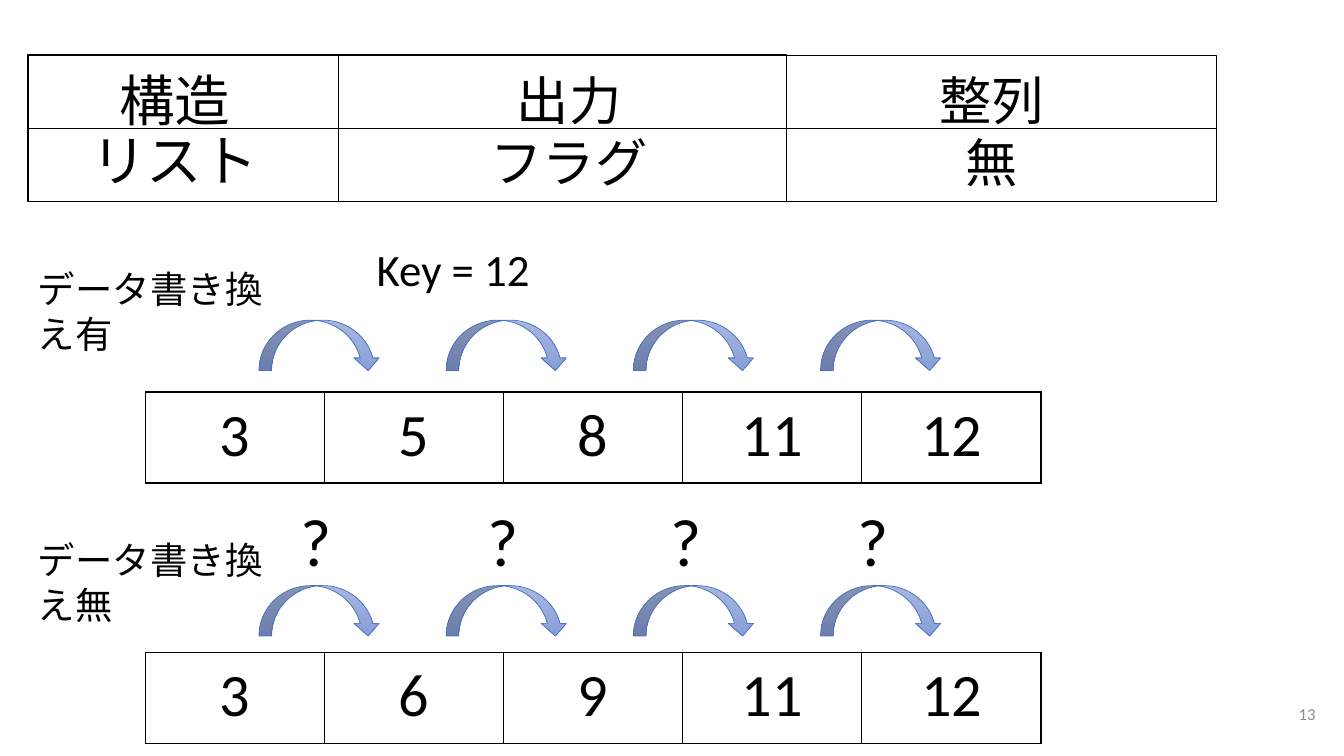
from lxml.etree import SubElement
from pptx import Presentation
from pptx.dml.color import RGBColor
from pptx.enum.shapes import MSO_CONNECTOR, MSO_SHAPE
from pptx.enum.text import MSO_ANCHOR, PP_ALIGN
from pptx.oxml import parse_xml
from pptx.oxml.ns import nsdecls, qn
from pptx.util import Pt

COLORS = {
    "ink": "000000",
    "arrow_line": "4472C4",
    "arrow_top": "A8B7DF",
    "arrow_bottom": "889ED7",
    "page_number": "8C8C8C",
}


class SlideBuilder:
    def __init__(self, page, font="Calibri"):
        self.page = page
        self.font = font

    def color(self, name):
        return RGBColor.from_string(COLORS[name])

    def add_lines(self, frame, lines, size, align, color="ink", font=None, spacing=None):
        for index, line in enumerate(lines):
            para = frame.paragraphs[0] if index == 0 else frame.add_paragraph()
            para.alignment = align
            if spacing:
                para.line_spacing = spacing
            span = para.add_run()
            span.text = line
            span.font.size = Pt(size)
            span.font.name = font or self.font
            span.font.color.rgb = self.color(color)

    def text(self, left, top, width, height, lines, size, align=PP_ALIGN.LEFT,
             margins=(7.2, 3.6), anchor=MSO_ANCHOR.TOP, **style):
        box = self.page.shapes.add_textbox(Pt(left), Pt(top), Pt(width), Pt(height))
        frame = box.text_frame
        frame.word_wrap = True
        frame.vertical_anchor = anchor
        frame.margin_left = frame.margin_right = Pt(margins[0])
        frame.margin_top = frame.margin_bottom = Pt(margins[1])
        self.add_lines(frame, lines, size, align, **style)

    def frame(self, left, top, width, height):
        box = self.page.shapes.add_shape(
            MSO_SHAPE.RECTANGLE, Pt(left), Pt(top), Pt(width), Pt(height))
        box.shadow.inherit = False
        box.fill.background()
        box.line.color.rgb = self.color("ink")
        box.line.width = Pt(1)

    def rule(self, left, right, top):
        line = self.page.shapes.add_connector(
            MSO_CONNECTOR.STRAIGHT, Pt(left), Pt(top), Pt(right), Pt(top))
        line.line.color.rgb = self.color("ink")
        line.line.width = Pt(0.5)
        SubElement(line._element.spPr, qn("a:effectLst"))

    def arrow(self, left, top, width, height):
        arrow = self.page.shapes.add_shape(
            MSO_SHAPE.CURVED_DOWN_ARROW, Pt(left), Pt(top), Pt(width), Pt(height))
        arrow.shadow.inherit = False
        arrow.fill.gradient()
        arrow.fill.gradient_angle = 270
        for stop, name in zip(arrow.fill.gradient_stops, ("arrow_top", "arrow_bottom")):
            stop.color.rgb = self.color(name)
        arrow.line.color.rgb = self.color("arrow_line")
        arrow.line.width = Pt(0.5)

    def cell_borders(self, cell):
        properties = cell._tc.get_or_add_tcPr()
        for index, side in enumerate(("lnL", "lnR", "lnT", "lnB")):
            properties.insert(index, parse_xml(
                f'<a:{side} {nsdecls("a")} w="{Pt(1)}"><a:solidFill>'
                f'<a:srgbClr val="{COLORS["ink"]}"/></a:solidFill></a:{side}>'))

    def array(self, left, top, cell_width, height, values):
        table = self.page.shapes.add_table(
            1, len(values), Pt(left), Pt(top),
            Pt(cell_width * len(values)), Pt(height)).table
        table.first_row = table.horz_banding = False
        for column, value in enumerate(values):
            table.columns[column].width = Pt(cell_width)
            cell = table.cell(0, column)
            cell.margin_left = cell.margin_right = Pt(9.6)
            cell.margin_top = cell.margin_bottom = Pt(4.8)
            cell.fill.background()
            self.cell_borders(cell)
            self.add_lines(cell.text_frame, [str(value)], 43, PP_ALIGN.CENTER)


def main():
    deck = Presentation()
    deck.slide_width, deck.slide_height = Pt(960), Pt(540)
    page = deck.slides.add_slide(deck.slide_layouts[6])
    build = SlideBuilder(page)
    center = PP_ALIGN.CENTER

    build.text(20, 45.4, 209.5, 60.5, ["構造", "リスト"], 39.6, center,
               margins=(7.2, 7.2), spacing=0.9)
    for left, width, lines in ((250.6, 311.8, ["出力", "フラグ"]),
                               (583.9, 249.1, ["整列", "無"])):
        build.text(left, 38.9, width, 67, lines, 37.3, center,
                   margins=(9.6, 9.6), font="Arial")
    for left, top, width in ((20, 39.6, 849), (20, 39, 222), (242, 39, 319.7)):
        build.frame(left, top, width, 144 - top)
    build.rule(20, 869, 91.5)

    build.text(262, 169.2, 137, 46, ["Key = 12"], 32)
    sections = (
        ("データ書き換え有", 186.5, 228.7, 280, (3, 5, 8, 11, 12)),
        ("データ書き換え無", 380.2, 418.3, 465.8, (3, 6, 9, 11, 12)),
    )
    for label, label_top, arrow_top, array_top, values in sections:
        build.text(20, label_top, 190, 72, [label], 26.7)
        build.array(103.7, array_top, 128, 65, values)
        for step in range(len(values) - 1):
            build.arrow(185 + step * 133.7, arrow_top, 87, 36)
    for left in (207.4, 341.3, 471.6, 605.5):
        build.text(left, 353, 52.6, 65.5, ["?"], 48)

    build.text(889.2, 489.6, 57.6, 41, ["13"], 12, PP_ALIGN.RIGHT,
               margins=(7.2, 7.2), anchor=MSO_ANCHOR.MIDDLE, color="page_number")
    deck.save("out.pptx")


if __name__ == "__main__":
    main()
